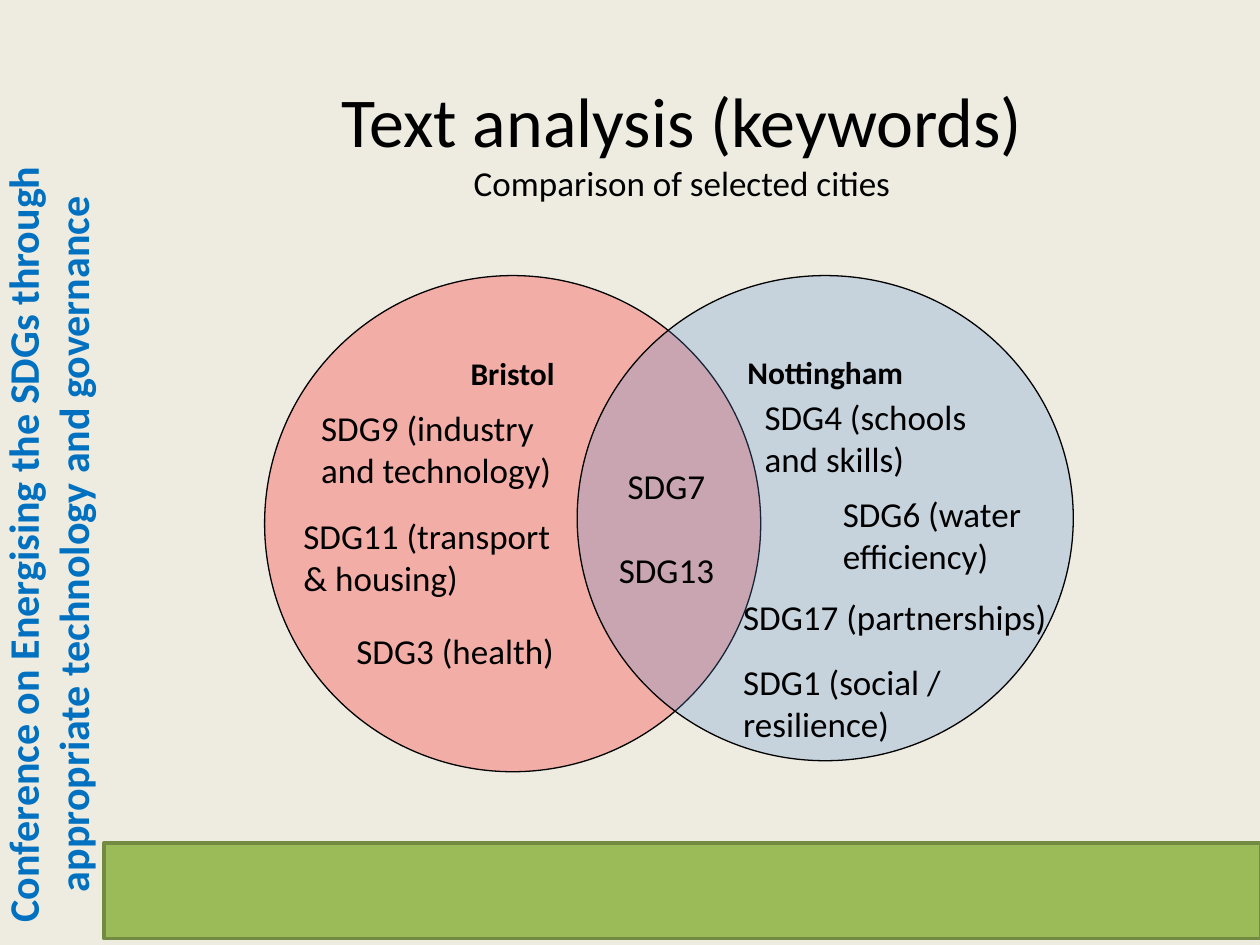
from dataclasses import dataclass

from lxml import etree
from pptx import Presentation
from pptx import util as u
from pptx.dml.color import RGBColor
from pptx.enum import shapes, text
from pptx.oxml import ns

BACKGROUND = RGBColor(0xEE, 0xEC, 0xE1)
BLACK = RGBColor(0, 0, 0)
BANNER_BLUE = RGBColor(0x00, 0x70, 0xC0)
GREEN = RGBColor(0x9B, 0xBB, 0x59)
DARK_GREEN = RGBColor(0x73, 0x8A, 0x42)
RED = RGBColor(0xFF, 0, 0)
BLUE = RGBColor(0x55, 0x8E, 0xD5)

CIRCLE_OPACITY = 26
LABEL_FORMAT = {"size": u.Pt(20)}
CITY_FORMAT = {"size": u.Pt(18), "bold": True}
BANNER_FORMAT = {"size": u.Pt(24), "bold": True}


@dataclass(frozen=True)
class Area:
    left: float
    top: float
    width: float
    height: float

    def lengths(self) -> tuple:
        return tuple(u.Pt(n) for n in (self.left, self.top, self.width, self.height))


@dataclass(frozen=True)
class City:
    name: str
    area: Area
    color: RGBColor


@dataclass(frozen=True)
class Label:
    lines: tuple
    area: Area
    shared: bool = False


BANNER_AREA = Area(-198.7, 283.7, 451.4, 54.7)
FOOTER_AREA = Area(59.5, 481.7, 661, 54.7)
TITLE_AREA = Area(59.5, 28.1, 660.5, 104.4)

CITIES = (
    City("Bristol", Area(151.2, 157.5, 283.5, 283.5), RED),
    City("Nottingham", Area(329.8, 157.5, 283.5, 277.2), BLUE),
)
LABELS = (
    Label(("SDG7", "SDG13"), Area(346.3, 262.1, 69.1, 80), shared=True),
    Label(("SDG6 (water efficiency)",), Area(474.5, 277.9, 140.4, 55.5)),
    Label(("SDG9 (industry and technology)",), Area(176.4, 229, 170, 55.5)),
    Label(("SDG11 (transport & housing)",), Area(166.3, 290.2, 163.5, 55.5)),
    Label(("SDG4 (schools and skills)",), Area(429.8, 222.5, 154.8, 55.5)),
    Label(("SDG17 (partnerships)",), Area(417.6, 337, 195.2, 31.7)),
    Label(("SDG1 (social / resilience)",), Area(417.6, 373.7, 183.6, 55.5)),
    Label(("SDG3 (health)",), Area(196.6, 356.4, 163.5, 31.7)),
)


def add_span(para, wording: str, font_format: dict, color: RGBColor = BLACK) -> None:
    span = para.add_run()
    span.text = wording
    span.font.color.rgb = color
    for name, value in {"name": "Calibri", **font_format}.items():
        setattr(span.font, name, value)


def add_outlined(page, kind, area: Area, fill: RGBColor, line: RGBColor, weight: float):
    shape = page.shapes.add_shape(kind, *area.lengths())
    shape.shadow.inherit = False
    shape.fill.solid()
    shape.fill.fore_color.rgb = fill
    shape.line.color.rgb = line
    shape.line.width = u.Pt(weight)
    return shape


def set_opacity(shape, percent: int) -> None:
    color = shape.element.spPr.find(ns.qn("a:solidFill"))[0]
    etree.SubElement(color, ns.qn("a:alpha"), val=str(percent * 1000))


def add_banner(page) -> None:
    box = page.shapes.add_textbox(*BANNER_AREA.lengths())
    box.rotation = 270
    box.text_frame.word_wrap = True
    box.text_frame.vertical_anchor = text.MSO_ANCHOR.MIDDLE
    para = box.text_frame.paragraphs[0]
    para.alignment = text.PP_ALIGN.CENTER
    wording = "Conference on Energising the SDGs through appropriate technology and governance"
    add_span(para, wording, BANNER_FORMAT, BANNER_BLUE)


def add_title(page) -> None:
    title = page.shapes.title
    title.left, title.top, title.width, title.height = TITLE_AREA.lengths()
    title.text_frame.vertical_anchor = text.MSO_ANCHOR.MIDDLE
    para = title.text_frame.paragraphs[0]
    para.alignment = text.PP_ALIGN.CENTER
    add_span(para, "Text analysis (keywords)", {"size": u.Pt(40)})
    para.add_line_break()
    add_span(para, "Comparison of selected cities", {"size": u.Pt(20)})


def add_city(page, city: City) -> None:
    circle = add_outlined(page, shapes.MSO_SHAPE.OVAL, city.area, city.color, BLACK, 0.75)
    set_opacity(circle, CIRCLE_OPACITY)
    circle.text_frame.vertical_anchor = text.MSO_ANCHOR.TOP
    para = circle.text_frame.paragraphs[0]
    para.alignment = text.PP_ALIGN.CENTER
    add_span(para, city.name, CITY_FORMAT)


def add_label(page, label: Label) -> None:
    box = page.shapes.add_textbox(*label.area.lengths())
    frame = box.text_frame
    frame.word_wrap = not label.shared
    frame.auto_size = text.MSO_AUTO_SIZE.SHAPE_TO_FIT_TEXT
    for index, line in enumerate(label.lines):
        para = frame.add_paragraph() if index else frame.paragraphs[0]
        if index:
            para.space_before = u.Pt(24)
        if label.shared:
            para.alignment = text.PP_ALIGN.CENTER
        add_span(para, line, LABEL_FORMAT)


def main() -> None:
    deck = Presentation()
    deck.slide_width, deck.slide_height = u.Pt(720), u.Pt(540)
    page = deck.slides.add_slide(deck.slide_layouts[5])
    page.background.fill.solid()
    page.background.fill.fore_color.rgb = BACKGROUND

    add_banner(page)
    add_outlined(page, shapes.MSO_SHAPE.RECTANGLE, FOOTER_AREA, GREEN, DARK_GREEN, 2)
    add_title(page)
    for city in CITIES:
        add_city(page, city)
    for label in LABELS:
        add_label(page, label)
    deck.save("out.pptx")


if __name__ == "__main__":
    main()
